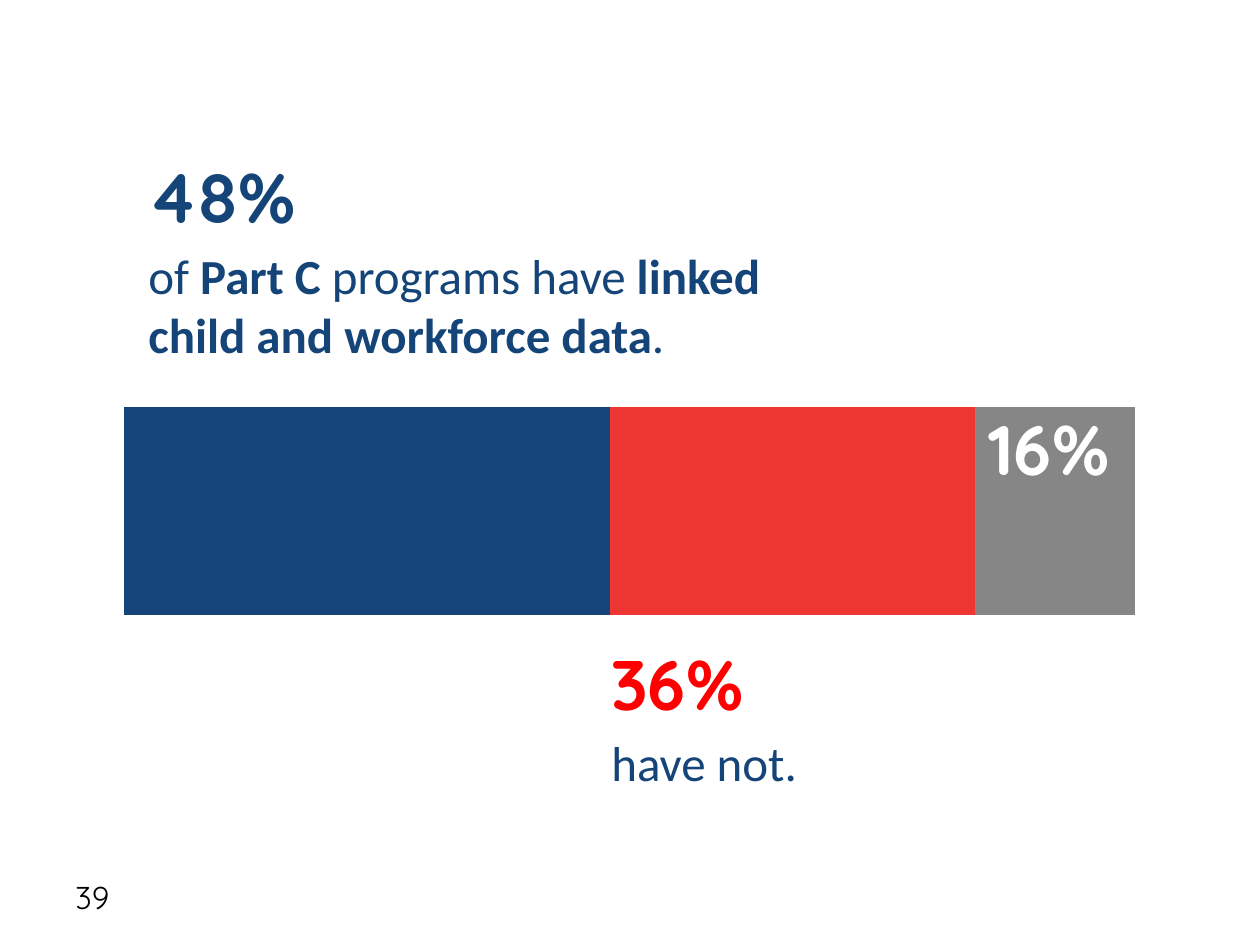
from lxml import etree
from pptx import Presentation
from pptx import util as u
from pptx.chart.data import CategoryChartData
from pptx.dml.color import RGBColor
from pptx.enum import chart as ch, text
from pptx.oxml import ns

PX = 914400 / 126
NAVY = RGBColor(0x15, 0x45, 0x78)
CORAL = RGBColor(0xED, 0x35, 0x32)
GREY = RGBColor(0x86, 0x86, 0x87)
GREEN = RGBColor(0x9B, 0xBB, 0x59)
RED = RGBColor(0xFF, 0x00, 0x00)
WHITE = RGBColor(0xFF, 0xFF, 0xFF)
BLACK = RGBColor(0x00, 0x00, 0x00)

FIGURE = {"name": "Quicksand", "size": u.Pt(40), "bold": True}
CAPTION = {"name": "Calibri", "size": u.Pt(28)}
PAGE = {"name": "Quicksand", "size": u.Pt(18)}

SHARES = [("Series 1", 100, NAVY), ("Series 2", 75, CORAL), ("Series 3", 33, GREEN)]
PLOT = {"x": 0.018, "y": 0.047, "w": 0.963, "h": 0.931}


def emu(*lengths):
    return [u.Emu(round(length * PX)) for length in lengths]


def set_format(target, values):
    for name, value in values.items():
        setattr(target, name, value)


def add_label(slide, place, runs, style, color, **frame_format):
    frame = slide.shapes.add_textbox(*emu(*place)).text_frame
    set_format(frame, {"word_wrap": True, **frame_format})
    for words, emphasis in runs:
        run = frame.paragraphs[0].add_run()
        run.text = words
        set_format(run.font, {**style, **emphasis})
        run.font.color.rgb = color


def place_plot(chart):
    area = chart._chartSpace.chart.plotArea
    for old in area.findall(ns.qn("c:layout")):
        area.remove(old)
    layout = etree.Element(ns.qn("c:layout"))
    area.insert(0, layout)
    manual = etree.SubElement(layout, ns.qn("c:manualLayout"))
    settings = {"layoutTarget": "inner", "xMode": "edge", "yMode": "edge", **PLOT}
    for tag, value in settings.items():
        etree.SubElement(manual, ns.qn(f"c:{tag}")).set("val", str(value))


def add_share_bar(slide, place):
    shares = CategoryChartData()
    shares.categories = ["1"]
    for name, value, _ in SHARES:
        shares.add_series(name, [value])
    chart = slide.shapes.add_chart(ch.XL_CHART_TYPE.BAR_STACKED, *emu(*place), shares).chart
    set_format(chart, {"has_legend": False, "has_title": False})
    set_format(chart.font, {"name": "Calibri", "size": u.Pt(18)})
    chart.font.color.rgb = BLACK
    set_format(chart.category_axis, {"visible": False, "has_major_gridlines": False})
    set_format(chart.value_axis, {
        "visible": False, "has_major_gridlines": False,
        "minimum_scale": 0, "maximum_scale": 208, "major_unit": 42,
    })
    set_format(chart.value_axis.tick_labels,
               {"number_format": "0%", "number_format_is_linked": False})
    bars = chart.plots[0]
    set_format(bars, {"gap_width": 150, "overlap": 100, "vary_by_categories": False})
    for series, (_, _, color) in zip(bars.series, SHARES):
        series.format.fill.solid()
        series.format.fill.fore_color.rgb = color
    unknown = bars.series[2].points[0].format.fill
    unknown.solid()
    unknown.fore_color.rgb = GREY
    place_plot(chart)


def main():
    prs = Presentation()
    prs.slide_width, prs.slide_height = emu(1260, 945)
    slide = prs.slides.add_slide(prs.slide_layouts[6])
    grow = {"auto_size": text.MSO_AUTO_SIZE.SHAPE_TO_FIT_TEXT}
    bold = {"bold": True}

    add_share_bar(slide, (105, 224, 1050, 560))
    add_label(slide, (63, 872, 294, 50), [("39", {})], PAGE, BLACK,
              vertical_anchor=text.MSO_ANCHOR.MIDDLE)
    linked = [("of ", {}), ("Part C", bold), (" programs have ", {}),
              ("linked child and workforce data", bold), (".", {})]
    for place, runs in [((136, 239, 651, 131), linked),
                        ((599, 726, 559, 72), [("have not.", {})])]:
        add_label(slide, place, runs, CAPTION, NAVY, **grow)
    for figure, left, top, width, color in [("48%", 136, 147, 609, NAVY),
                                            ("36%", 599, 634, 609, RED),
                                            ("16%", 976, 399, 168, WHITE)]:
        add_label(slide, (left, top, width, 97), [(figure, {})], FIGURE, color, **grow)

    prs.save("out.pptx")


if __name__ == "__main__":
    main()
